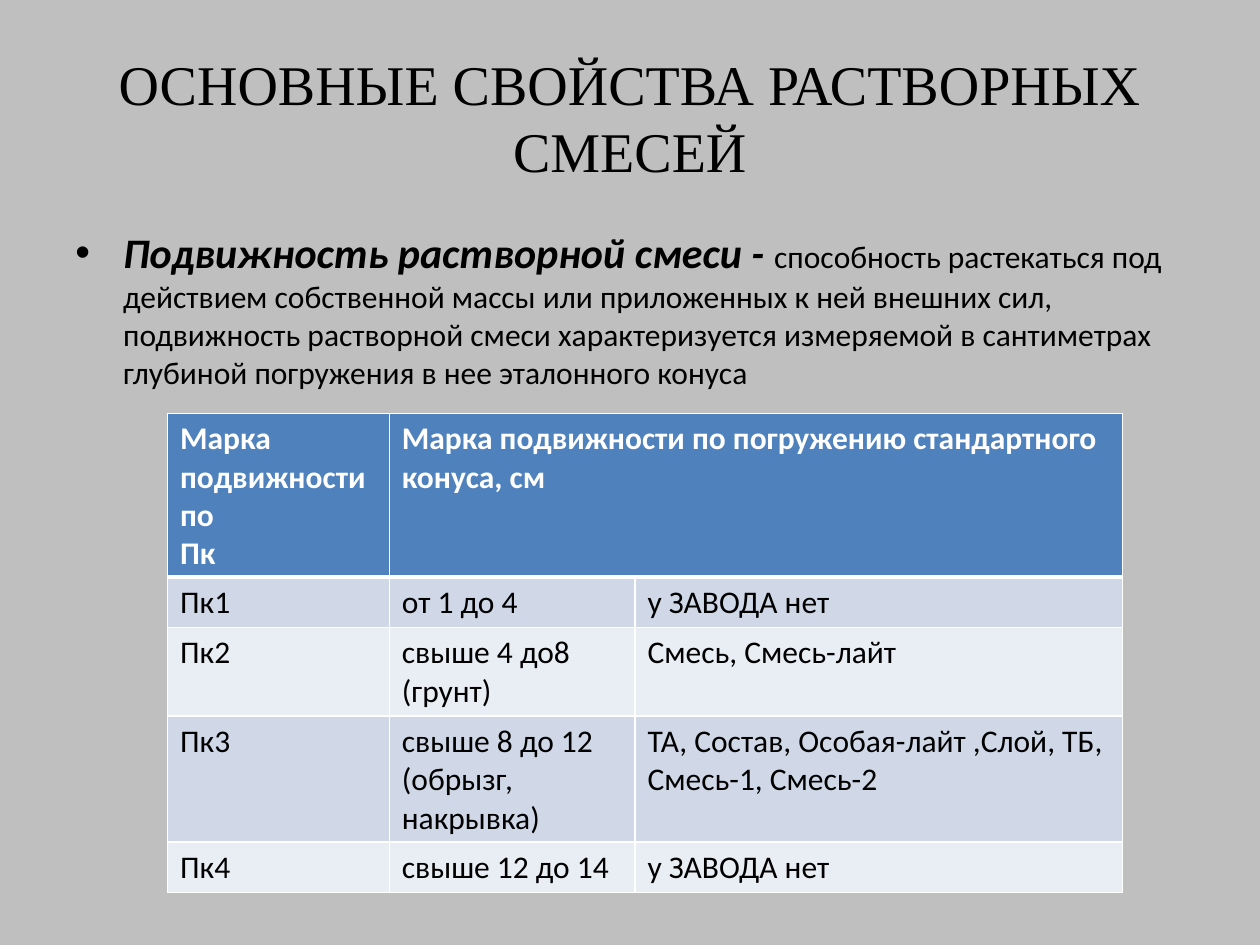
from lxml import etree
from pptx import Presentation
from pptx.dml.color import RGBColor
from pptx.enum import text
from pptx.oxml.ns import qn
from pptx.util import Inches, Pt


def color(value):
    return RGBColor.from_string(value)


def add_run(p, content, value="000000", **font):
    r = p.add_run()
    r.text = content
    r.font.color.rgb = color(value)
    for name, setting in ({"name": "Calibri", "size": Pt(18)} | font).items():
        setattr(r.font, name, setting)


prs = Presentation()
prs.slide_width, prs.slide_height = Inches(10), Inches(7.5)
s = prs.slides.add_slide(prs.slide_layouts[6])
s.background.fill.solid()
s.background.fill.fore_color.rgb = color("BFBFBF")

# Title
tf = s.shapes.add_textbox(Inches(0.5), Inches(0.3), Inches(9), Inches(1.25)).text_frame
tf.word_wrap = True
tf.vertical_anchor = text.MSO_ANCHOR.MIDDLE
p = tf.paragraphs[0]
p.alignment = text.PP_ALIGN.CENTER
add_run(p, "ОСНОВНЫЕ СВОЙСТВА РАСТВОРНЫХ СМЕСЕЙ", name="Times New Roman", size=Pt(32))

# Definition with a bullet
tf = s.shapes.add_textbox(Inches(0.5), Inches(1.75), Inches(9), Inches(5.52)).text_frame
tf.word_wrap = True
p = tf.paragraphs[0]
pPr = p._p.get_or_add_pPr()
pPr.set("marL", str(Inches(0.38)))
pPr.set("indent", str(Inches(-0.38)))
etree.SubElement(pPr, qn("a:buFont"), typeface="Arial")
etree.SubElement(pPr, qn("a:buChar"), char="•")
add_run(p, "Подвижность растворной смеси - ", size=Pt(24), bold=True, italic=True)
add_run(p, "способность растекаться под действием собственной массы или приложенных "
           "к ней внешних сил, подвижность растворной смеси характеризуется измеряемой "
           "в сантиметрах глубиной погружения в нее эталонного конуса")

# Mobility grades table
rows = [
    ["Марка подвижности по\nПк", "Марка подвижности по погружению стандартного конуса, см", ""],
    ["Пк1", "от 1 до 4", "у ЗАВОДА нет"],
    ["Пк2", "свыше 4 до8 (грунт)", "Смесь, Смесь-лайт"],
    ["Пк3", "свыше 8 до 12 (обрызг, накрывка)", "ТА, Состав, Особая-лайт ,Слой, ТБ, Смесь-1, Смесь-2"],
    ["Пк4", "свыше 12 до 14", "у ЗАВОДА нет"],
]
widths = [1.76, 1.95, 3.87]
heights = [1.23, 0.38, 0.66, 0.95, 0.38]
table = s.shapes.add_table(len(rows), len(widths), Inches(1.33), Inches(3.28),
                           Inches(sum(widths)), Inches(sum(heights))).table
for column, width in zip(table.columns, widths):
    column.width = Inches(width)
for row, height in zip(table.rows, heights):
    row.height = Inches(height)
table.cell(0, 1).merge(table.cell(0, 2))

for i, row in enumerate(rows):
    header = i == 0
    fill = "4F81BD" if header else ("E9EDF4", "D0D8E8")[i % 2]
    for j, content in enumerate(row):
        cell = table.cell(i, j)
        # White borders, thicker below the header
        tcPr = cell._tc.get_or_add_tcPr()
        for side in "LRTB":
            thick = (header and side == "B") or (i == 1 and side == "T")
            ln = etree.SubElement(tcPr, qn("a:ln" + side), w=str(Pt(3 if thick else 1)))
            etree.SubElement(etree.SubElement(ln, qn("a:solidFill")), qn("a:srgbClr"), val="FFFFFF")
        cell.fill.solid()
        cell.fill.fore_color.rgb = color(fill)
        if cell.is_spanned:
            continue
        for k, line in enumerate(content.split("\n")):
            p = cell.text_frame.add_paragraph() if k else cell.text_frame.paragraphs[0]
            add_run(p, line, "FFFFFF" if header else "000000", bold=header)

prs.save("out.pptx")
